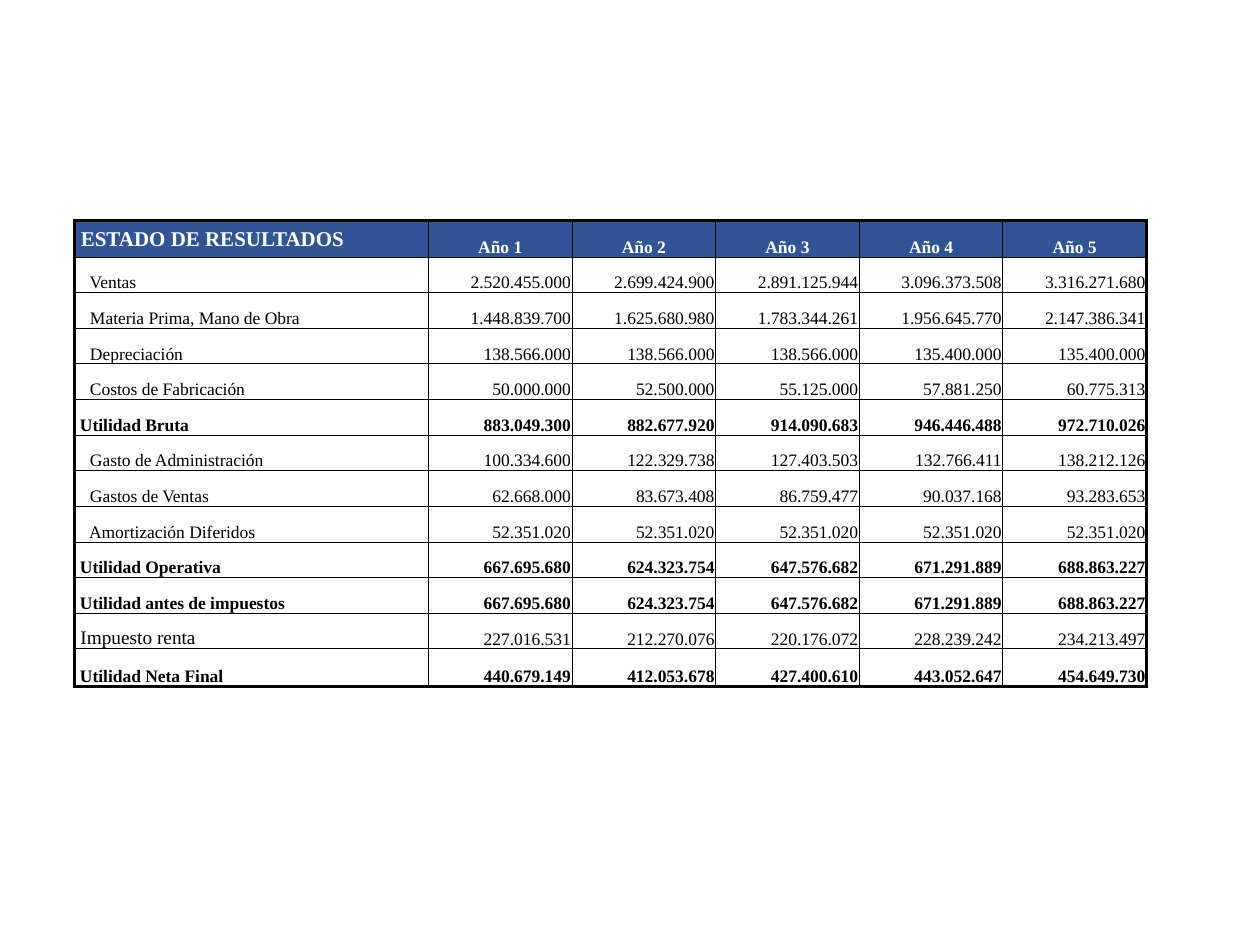
from lxml import etree
from pptx import Presentation
from pptx.dml.color import RGBColor
from pptx.enum.text import MSO_ANCHOR, PP_ALIGN
from pptx.oxml.ns import qn
from pptx.util import Inches, Pt

LEFT, CENTER, RIGHT = PP_ALIGN.LEFT, PP_ALIGN.CENTER, PP_ALIGN.RIGHT
MIDDLE, BOTTOM = MSO_ANCHOR.MIDDLE, MSO_ANCHOR.BOTTOM
FONT = "Times New Roman"
BLACK, WHITE, BLUE = "000000", "FFFFFF", "305496"
THIN, THICK = 0.5, 2
TABLE_LEFT, TABLE_TOP, TABLE_WIDTH, TABLE_HEIGHT = 0.59, 1.75, 8.51, 3.7
LABEL_WIDTH, HEADER_HEIGHT, TOTAL_HEIGHT = 2.81, 0.29, 0.3
INSET, INDENT = 0.01, 0.09

HEADER = ["ESTADO DE RESULTADOS"] + [f"Año {year}" for year in range(1, 6)]
STATEMENT = [
    ("Ventas", "2.520.455.000 2.699.424.900 2.891.125.944 3.096.373.508 3.316.271.680"),
    ("Materia Prima, Mano de Obra",
     "1.448.839.700 1.625.680.980 1.783.344.261 1.956.645.770 2.147.386.341"),
    ("Depreciación", "138.566.000 138.566.000 138.566.000 135.400.000 135.400.000"),
    ("Costos de Fabricación", "50.000.000 52.500.000 55.125.000 57.881.250 60.775.313"),
    ("Utilidad Bruta", "883.049.300 882.677.920 914.090.683 946.446.488 972.710.026"),
    ("Gasto de Administración", "100.334.600 122.329.738 127.403.503 132.766.411 138.212.126"),
    ("Gastos de Ventas", "62.668.000 83.673.408 86.759.477 90.037.168 93.283.653"),
    ("Amortización Diferidos", "52.351.020 52.351.020 52.351.020 52.351.020 52.351.020"),
    ("Utilidad Operativa", "667.695.680 624.323.754 647.576.682 671.291.889 688.863.227"),
    ("Utilidad antes de impuestos",
     "667.695.680 624.323.754 647.576.682 671.291.889 688.863.227"),
    ("Impuesto renta", "227.016.531 212.270.076 220.176.072 228.239.242 234.213.497"),
    ("Utilidad Neta Final", "440.679.149 412.053.678 427.400.610 443.052.647 454.649.730"),
]


def rgb(value):
    """Turn a hex string into a colour."""
    return RGBColor.from_string(value)


def write(cell, text, size=10, bold=False, color=BLACK, align=LEFT, anchor=BOTTOM, indent=INSET):
    """Put formatted text in a cell."""
    cell.margin_left, cell.margin_right = Inches(indent), Inches(INSET)
    cell.margin_top, cell.margin_bottom = Inches(INSET), 0
    cell.vertical_anchor = anchor
    paragraph = cell.text_frame.paragraphs[0]
    paragraph.alignment = align
    run = paragraph.add_run()
    run.text = text
    run.font.name, run.font.size, run.font.bold = FONT, Pt(size), bold
    run.font.color.rgb = rgb(color)


def add_borders(cell, outer):
    """Draw the cell's four sides, thick where the side is on the table's edge."""
    properties = cell._tc.get_or_add_tcPr()
    for side in ("L", "R", "T", "B"):
        width = THICK if side in outer else THIN
        line = etree.SubElement(properties, qn(f"a:ln{side}"), w=str(Pt(width)))
        fill = etree.SubElement(line, qn("a:solidFill"))
        etree.SubElement(fill, qn("a:srgbClr"), val=BLACK)


def paint(cell, color=None):
    """Fill a cell, or leave it clear."""
    if color:
        cell.fill.solid()
        cell.fill.fore_color.rgb = rgb(color)
    else:
        cell.fill.background()


def add_grid(slide, row_count, column_count):
    """Add an unbanded table with its column widths, row heights and borders."""
    table = slide.shapes.add_table(
        row_count, column_count, Inches(TABLE_LEFT), Inches(TABLE_TOP),
        Inches(TABLE_WIDTH), Inches(TABLE_HEIGHT)).table
    table.first_row = table.horz_banding = False
    year_width = (TABLE_WIDTH - LABEL_WIDTH) / (column_count - 1)
    for index, column in enumerate(table.columns):
        column.width = Inches(year_width if index else LABEL_WIDTH)
    body_height = (TABLE_HEIGHT - HEADER_HEIGHT - TOTAL_HEIGHT) / (row_count - 2)
    heights = [HEADER_HEIGHT] + [body_height] * (row_count - 2) + [TOTAL_HEIGHT]
    for row_index, (row, height) in enumerate(zip(table.rows, heights)):
        row.height = Inches(height)
        for column_index, cell in enumerate(row.cells):
            edges = {"L": column_index == 0, "R": column_index == column_count - 1,
                     "T": row_index == 0, "B": row_index == row_count - 1}
            add_borders(cell, [side for side, on_edge in edges.items() if on_edge])
            paint(cell, None if row_index else BLUE)
    return table


def fill_header(table):
    """Write the statement's title and the years."""
    title, *years = HEADER
    write(table.cell(0, 0), f" {title}", size=12, bold=True, color=WHITE, anchor=MIDDLE)
    for column, year in enumerate(years, 1):
        write(table.cell(0, column), year, bold=True, color=WHITE, align=CENTER)


def fill_account(table, row, label, amounts):
    """Write one account, with profit lines in bold and detail lines indented."""
    profit, tax = label.startswith("Utilidad"), label.startswith("Impuesto")
    write(table.cell(row, 0), f" {label}", size=11 if tax else 10, bold=profit,
          indent=INSET if profit or tax else INDENT)
    for column, amount in enumerate(amounts.split(), 1):
        write(table.cell(row, column), amount, bold=profit, align=RIGHT)


def main():
    """Build the income statement slide."""
    presentation = Presentation()
    presentation.slide_width, presentation.slide_height = Inches(10), Inches(7.5)
    slide = presentation.slides.add_slide(presentation.slide_layouts[6])
    table = add_grid(slide, len(STATEMENT) + 1, len(HEADER))
    fill_header(table)
    for row, (label, amounts) in enumerate(STATEMENT, 1):
        fill_account(table, row, label, amounts)
    presentation.save("out.pptx")


if __name__ == "__main__":
    main()
